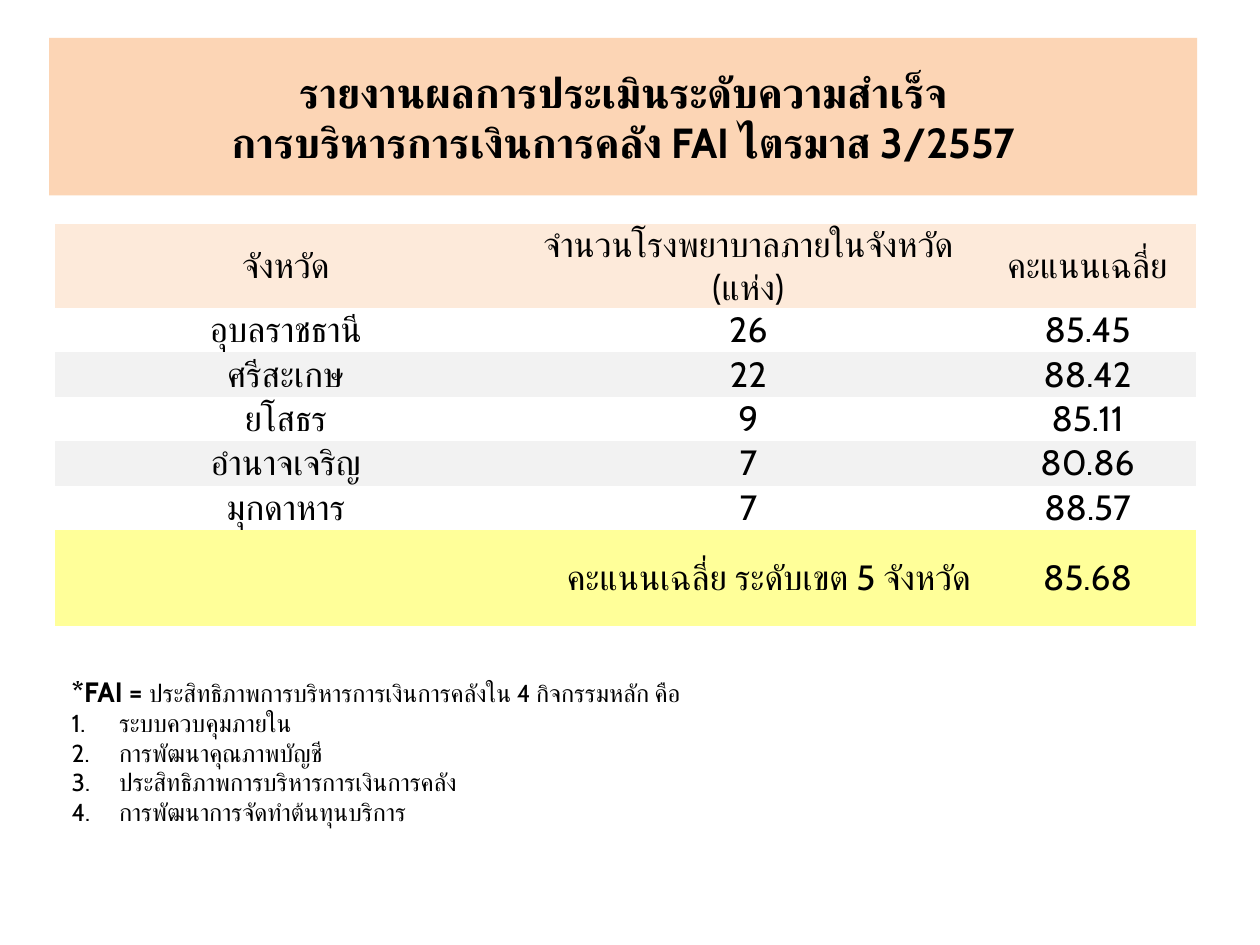
"""Builds the slide reporting quarterly FAI scores by province."""
from lxml import etree
from pptx import Presentation
from pptx import util as u
from pptx.dml.color import RGBColor
from pptx.enum import text
from pptx.oxml import ns

Pt = u.Pt
COLORS = {"title": "FCD5B5", "header": "FDEADA", "plain": "FFFFFF",
          "band": "F2F2F2", "total": "FFFF99", "text": "000000"}
ROWS = [
    ("จังหวัด", "จำนวนโรงพยาบาลภายในจังหวัด (แห่ง)", "คะแนนเฉลี่ย"),
    ("อุบลราชธานี", "26", "85.45"),
    ("ศรีสะเกษ", "22", "88.42"),
    ("ยโสธร", "9", "85.11"),
    ("อำนาจเจริญ", "7", "80.86"),
    ("มุกดาหาร", "7", "88.57"),
    ("คะแนนเฉลี่ย ระดับเขต 5 จังหวัด", "", "85.68"),
]
FILLS = ["header", "plain", "band", "plain", "band", "plain", "total"]
ACTIVITIES = ["ระบบควบคุมภายใน", "การพัฒนาคุณภาพบัญชี",
              "ประสิทธิภาพการบริหารการเงินการคลัง", "การพัฒนาการจัดทำต้นทุนบริการ"]


def add_run(p, words, size, bold=False):
    r = p.add_run()
    r.text = words
    r.font.size, r.font.bold, r.font.name = Pt(size), bold, "Cabin"
    r.font.color.rgb = RGBColor.from_string(COLORS["text"])
    etree.SubElement(r.font._element, ns.qn("a:cs"), typeface="Cabin")


def place(sp, left, top, width, height):
    sp.left, sp.top, sp.width, sp.height = Pt(left), Pt(top), Pt(width), Pt(height)


prs = Presentation()
prs.slide_width, prs.slide_height = Pt(720), Pt(540)
s = prs.slides.add_slide(prs.slide_layouts[1])

title = s.shapes.title
place(title, 28.1, 21.6, 656, 90)
title.fill.solid()
title.fill.fore_color.rgb = RGBColor.from_string(COLORS["title"])
tf = title.text_frame
tf.vertical_anchor = text.MSO_ANCHOR.MIDDLE
p = tf.paragraphs[0]
p.alignment = text.PP_ALIGN.CENTER
add_run(p, "รายงานผลการประเมินระดับความสำเร็จ", 24, True)
p.add_line_break()
add_run(p, "การบริหารการเงินการคลัง FAI ไตรมาส 3/2557", 24, True)

frame = s.shapes.add_table(len(ROWS), 3, Pt(31.2), Pt(127.9), Pt(652), Pt(207))
table = frame.table
table.first_row = table.horz_banding = False
style = table._tbl.tblPr.find(ns.qn("a:tableStyleId"))
style.text = "{2D5ABB26-0587-4C30-8999-92F81FD0307C}"
for column, width in zip(table.columns, (264.3, 264.3, 123.4)):
    column.width = Pt(width)
for row in table.rows:
    row.height = Pt(25.4)
table.rows[len(ROWS) - 1].height = Pt(54.7)
table.cell(6, 0).merge(table.cell(6, 1))

for i, (values, fill) in enumerate(zip(ROWS, FILLS)):
    for j, value in enumerate(values):
        cell = table.cell(i, j)
        cell.fill.solid()
        cell.fill.fore_color.rgb = RGBColor.from_string(COLORS[fill])
        cell.margin_left = cell.margin_right = cell.margin_top = cell.margin_bottom = 0
        cell.vertical_anchor = text.MSO_ANCHOR.MIDDLE
        if value:
            p = cell.text_frame.paragraphs[0]
            p.alignment = text.PP_ALIGN.CENTER
            add_run(p, value, 20)
total = table.cell(6, 0)
total.margin_right = Pt(5)
total.text_frame.paragraphs[0].alignment = text.PP_ALIGN.RIGHT

body = s.placeholders[1]
place(body, 33.8, 381.6, 420.5, 94.3)
tf = body.text_frame
tf.word_wrap = False
tf.auto_size = text.MSO_AUTO_SIZE.SHAPE_TO_FIT_TEXT
tf.vertical_anchor = text.MSO_ANCHOR.MIDDLE
p = tf.paragraphs[0]
p.space_before = Pt(0)
pPr = p._p.get_or_add_pPr()
pPr.set("marL", "0")
pPr.set("indent", "0")
etree.SubElement(pPr, ns.qn("a:buNone"))
add_run(p, "*FAI = ", 16, True)
add_run(p, "ประสิทธิภาพการบริหารการเงินการคลังใน 4 กิจกรรมหลัก คือ", 14)
for activity in ACTIVITIES:
    p = tf.add_paragraph()
    p.space_before = Pt(0)
    pPr = p._p.get_or_add_pPr()
    pPr.set("marL", str(Pt(27)))
    pPr.set("indent", str(-Pt(27)))
    etree.SubElement(pPr, ns.qn("a:buFont"), typeface="Arial")
    etree.SubElement(pPr, ns.qn("a:buAutoNum"), type="arabicPeriod")
    add_run(p, activity, 14)

prs.save("out.pptx")
